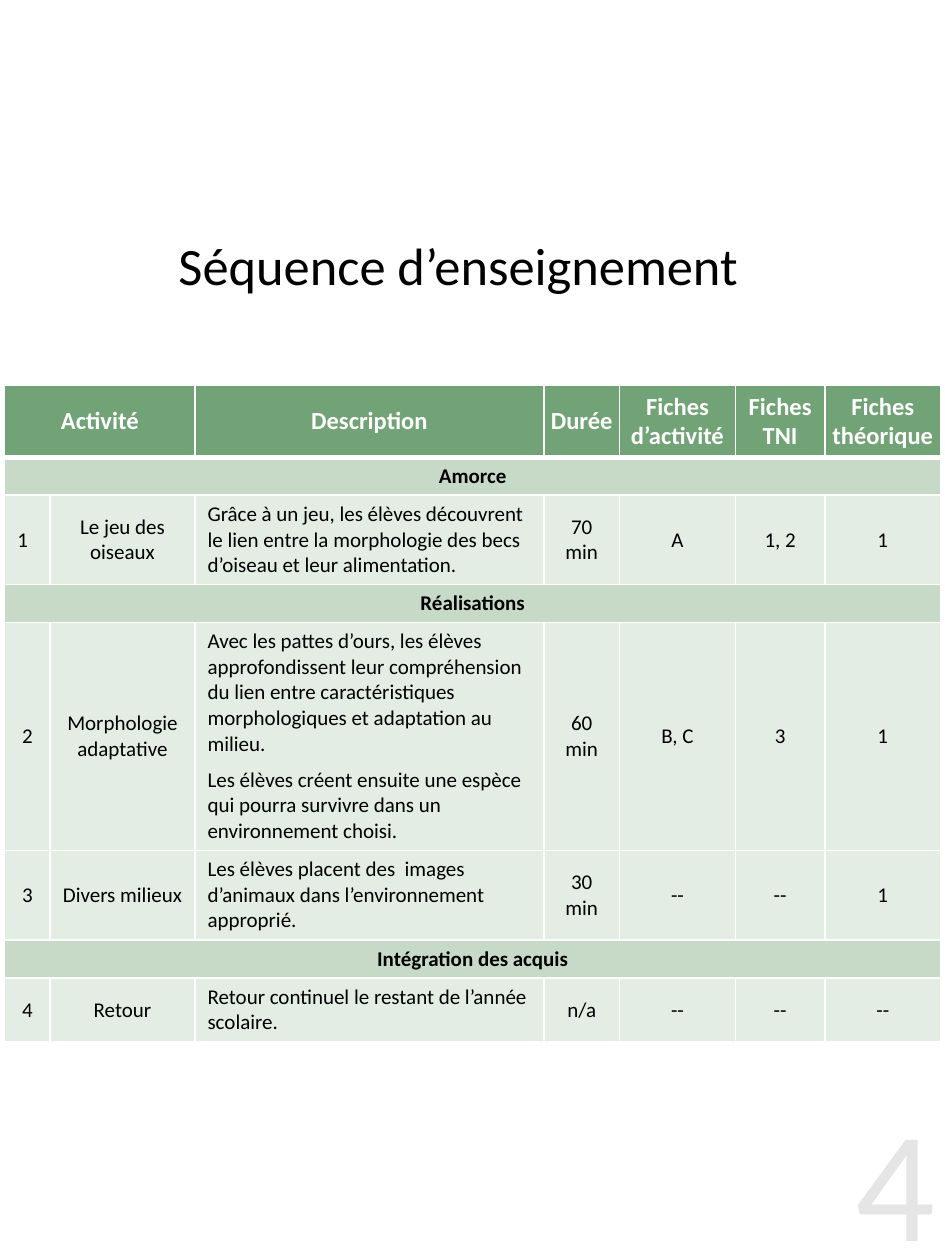
from lxml.etree import SubElement as Sub
from pptx import Presentation
from pptx.dml.color import RGBColor as Rgb
from pptx.enum.text import MSO_ANCHOR as Anchor, PP_ALIGN as Align
from pptx.oxml.ns import qn
from pptx.util import Inches, Pt

WIDE, HIGH = 7.5, 10
INK = {"text": "000000", "white": "FFFFFF", "head": "72A376",
       "band": "C7DAC8", "body": "E3EDE4", "page": "E5E5E5"}
COLS = [0.36, 1.15, 2.77, 0.6, 0.92, 0.71, 0.92]

# A row with a single entry is a band across the whole table.
ROWS = [
    (0.57, ["Activité", "", "Description", "Durée", "Fiches d’activité",
            "Fiches TNI", "Fiches théorique"]),
    (0.3, ["Amorce"]),
    (0.71, ["1", "Le jeu des oiseaux",
            "Grâce à un jeu, les élèves découvrent le lien entre la "
            "morphologie des becs d’oiseau et leur alimentation.",
            "70 min", "A", "1, 2", "1"]),
    (0.3, ["Réalisations"]),
    (1.81, ["2", "Morphologie adaptative",
            "Avec les pattes d’ours, les élèves approfondissent leur "
            "compréhension du lien entre caractéristiques morphologiques "
            "et adaptation au milieu.\n"
            "Les élèves créent ensuite une espèce qui pourra survivre dans "
            "un environnement choisi.",
            "60 min", "B, C", "3", "1"]),
    (0.71, ["3", "Divers milieux",
            "Les élèves placent des  images d’animaux dans l’environnement "
            "approprié.", "30 min", "--", "--", "1"]),
    (0.3, ["Intégration des acquis"]),
    (0.51, ["4", "Retour", "Retour continuel le restant de l’année scolaire.",
            "n/a", "--", "--", "--"]),
]


class Page:
    font = "Calibri"

    def __init__(self, deck):
        self.slide = deck.slides.add_slide(deck.slide_layouts[6])

    def area(self, x, y, w, h):
        """Turn shares of the slide into lengths."""
        return (Inches(x * WIDE), Inches(y * HIGH),
                Inches(w * WIDE), Inches(h * HIGH))

    def put(self, frame, text, size, ink="text", bold=False,
            align=Align.CENTER):
        """Fill a text frame and style its paragraphs."""
        frame.word_wrap = True
        frame.text = text
        for i, para in enumerate(frame.paragraphs):
            para.alignment = align
            if i:
                para.space_before = Pt(6)
            font = para.font
            font.name, font.size, font.bold = self.font, Pt(size), bold
            font.color.rgb = Rgb.from_string(INK[ink])

    def text(self, box, text, size, ink="text", align=Align.CENTER,
             anchor=Anchor.MIDDLE):
        frame = self.slide.shapes.add_textbox(*self.area(*box)).text_frame
        frame.margin_left = frame.margin_right = 0
        frame.margin_top = frame.margin_bottom = 0
        frame.vertical_anchor = anchor
        self.put(frame, text, size, ink, align=align)

    def edge(self, cell, top, base):
        """Draw white cell borders, with their widths in points."""
        props = cell._tc.get_or_add_tcPr()
        for side, width in zip("LRTB", (1, 1, top, base)):
            line = Sub(props, qn("a:ln" + side), w=str(Pt(width)))
            fill = Sub(line, qn("a:solidFill"))
            Sub(fill, qn("a:srgbClr"), val=INK["white"])

    def table(self, box, cols, rows):
        grid = self.slide.shapes.add_table(
            len(rows), len(cols), *self.area(*box)).table
        for col, wide in zip(grid.columns, cols):
            col.width = Inches(wide)
        for r, (high, texts) in enumerate(rows):
            grid.rows[r].height = Inches(high)
            band = len(texts) == 1
            kind = "head" if r == 0 else "band" if band else "body"
            for c in range(len(cols)):
                cell = grid.cell(r, c)
                self.edge(cell, 3 if r == 1 else 1, 3 if r == 0 else 1)
                cell.fill.solid()
                cell.fill.fore_color.rgb = Rgb.from_string(INK[kind])
                cell.vertical_anchor = Anchor.MIDDLE
                if kind == "head" and c > 2:
                    cell.margin_left = cell.margin_right = Inches(0.04)
                if c < len(texts):
                    left = kind == "body" and (c == 2 or (r, c) == (2, 0))
                    self.put(cell.text_frame, texts[c],
                             14 if kind == "head" else 12,
                             "white" if kind == "head" else "text",
                             kind != "body",
                             Align.LEFT if left else Align.CENTER)
            if band:
                grid.cell(r, 0).merge(grid.cell(r, len(cols) - 1))
        grid.cell(0, 0).merge(grid.cell(0, 1))


def main():
    deck = Presentation()
    deck.slide_width, deck.slide_height = Inches(WIDE), Inches(HIGH)
    page = Page(deck)
    page.text((0.1, 0.17, 0.77, 0.08), "Séquence d’enseignement", 30)
    high = sum(row[0] for row in ROWS)
    page.table((0.005, 0.306, sum(COLS) / WIDE, high / HIGH), COLS, ROWS)
    page.text((0.78, 0.86, 0.21, 0.14), "4", 90, "page",
              Align.RIGHT, Anchor.TOP)
    deck.save("out.pptx")


if __name__ == "__main__":
    main()
